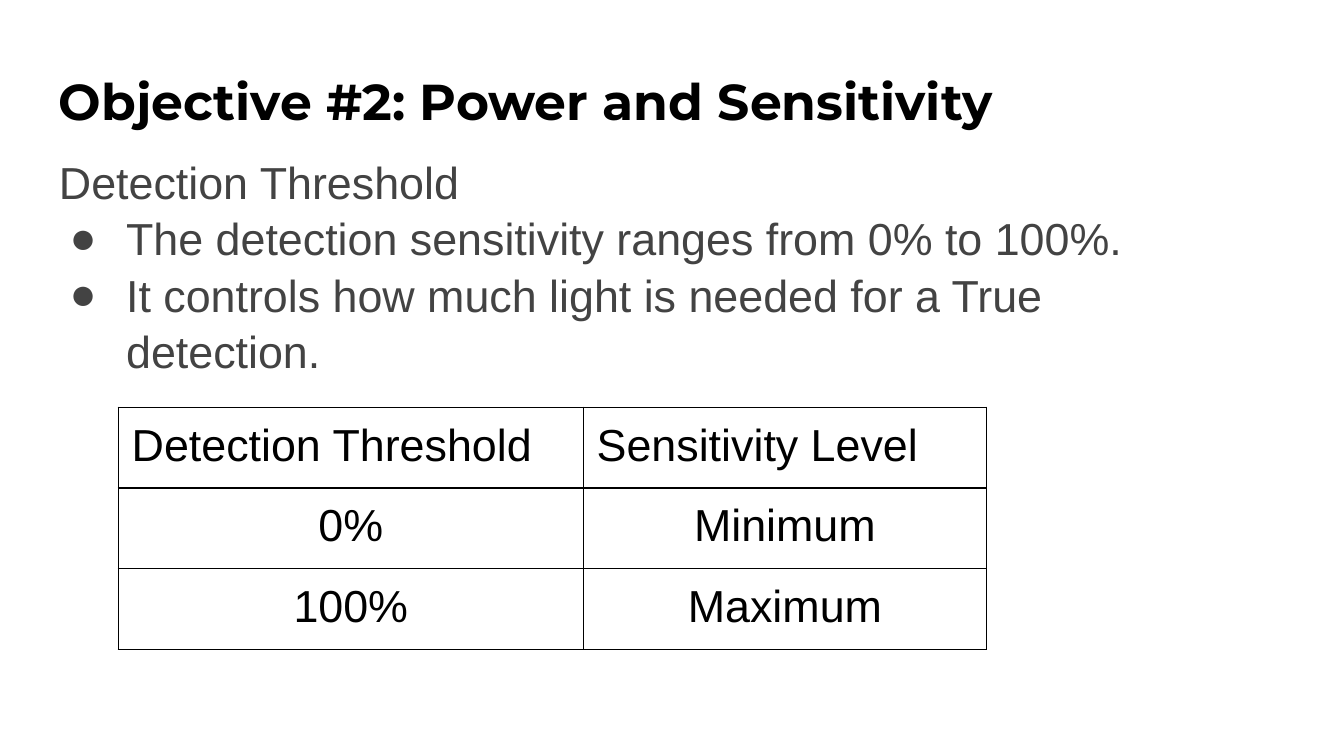
from dataclasses import dataclass

from lxml.etree import SubElement
from pptx import Presentation
from pptx.dml.color import RGBColor
from pptx.enum.text import PP_ALIGN
from pptx.oxml.ns import qn
from pptx.util import Emu, Pt

PIXEL = 4572  # 200 px to the inch
INSET = 20


@dataclass(frozen=True)
class TextStyle:
    font: str
    size: int
    color: str
    bold: bool = False


@dataclass(frozen=True)
class Theme:
    title: TextStyle = TextStyle("Montserrat", 27, "000000", True)
    body: TextStyle = TextStyle("Arial", 24, "434343")
    cell: TextStyle = TextStyle("Arial", 24, "000000")
    border_color: str = "000000"
    border_width: float = 0.75


@dataclass(frozen=True)
class Line:
    text: str
    bulleted: bool = False


@dataclass(frozen=True)
class TextBlock:
    left: int
    top: int
    width: int
    height: int
    style: TextStyle
    lines: tuple[Line, ...]
    spacing: float = 1.0


@dataclass(frozen=True)
class Grid:
    left: int
    top: int
    columns: tuple[int, ...]
    row_height: int
    rows: tuple[tuple[str, ...], ...]


THEME = Theme()

BLOCKS = (
    TextBlock(68, 84, 1864, 136, THEME.title,
              (Line("Objective #2: Power and Sensitivity"),)),
    TextBlock(68, 206, 1756, 400, THEME.body, (
        Line("Detection Threshold"),
        Line("The detection sensitivity ranges from 0% to 100%.", True),
        Line("It controls how much light is needed for a True detection.", True),
    ), 1.05),
)

SENSITIVITY = Grid(176, 606, (692, 600), 114, (
    ("Detection Threshold", "Sensitivity Level"),
    ("0%", "Minimum"),
    ("100%", "Maximum"),
))


def px(value: int) -> Emu:
    return Emu(value * PIXEL)


def add_span(para, text: str, style: TextStyle) -> None:
    span = para.add_run()
    span.text = text
    span.font.name = style.font
    span.font.size = Pt(style.size)
    span.font.bold = style.bold
    span.font.color.rgb = RGBColor.from_string(style.color)


def add_bullet(para, style: TextStyle) -> None:
    properties = para._p.get_or_add_pPr()
    properties.set("marL", str(px(100)))
    properties.set("indent", str(px(-84)))
    color = SubElement(properties, qn("a:buClr"))
    SubElement(color, qn("a:srgbClr"), val=style.color)
    SubElement(properties, qn("a:buSzPts"), val=str(style.size * 100))
    SubElement(properties, qn("a:buFont"), typeface=style.font)
    SubElement(properties, qn("a:buChar"), char="●")


def add_block(page, block: TextBlock) -> None:
    box = page.shapes.add_textbox(
        px(block.left), px(block.top), px(block.width), px(block.height))
    frame = box.text_frame
    frame.word_wrap = True
    frame.margin_left = frame.margin_right = px(INSET)
    frame.margin_top = frame.margin_bottom = px(INSET)
    for index, line in enumerate(block.lines):
        para = frame.add_paragraph() if index else frame.paragraphs[0]
        para.line_spacing = block.spacing
        if line.bulleted:
            add_bullet(para, block.style)
        add_span(para, line.text, block.style)


def add_borders(cell) -> None:
    properties = cell._tc.get_or_add_tcPr()
    for side in ("lnL", "lnR", "lnT", "lnB"):
        border = SubElement(properties, qn(f"a:{side}"),
                            w=str(Pt(THEME.border_width)))
        fill = SubElement(border, qn("a:solidFill"))
        SubElement(fill, qn("a:srgbClr"), val=THEME.border_color)


def add_grid(page, grid: Grid) -> None:
    table = page.shapes.add_table(
        len(grid.rows), len(grid.columns), px(grid.left), px(grid.top),
        px(sum(grid.columns)), px(grid.row_height * len(grid.rows))).table
    table.first_row = table.horz_banding = False
    for column, width in zip(table.columns, grid.columns):
        column.width = px(width)
    for row_index, texts in enumerate(grid.rows):
        for column_index, text in enumerate(texts):
            cell = table.cell(row_index, column_index)
            cell.margin_left = cell.margin_right = px(INSET)
            cell.margin_top = cell.margin_bottom = px(INSET)
            add_borders(cell)
            cell.fill.background()
            para = cell.text_frame.paragraphs[0]
            para.alignment = PP_ALIGN.CENTER if row_index else PP_ALIGN.LEFT
            add_span(para, text, THEME.cell)


def main() -> None:
    deck = Presentation()
    deck.slide_width, deck.slide_height = px(2000), px(1125)
    page = deck.slides.add_slide(deck.slide_layouts[6])

    # Heading and bullet list
    for block in BLOCKS:
        add_block(page, block)

    # Threshold and sensitivity table
    add_grid(page, SENSITIVITY)

    deck.save("out.pptx")


if __name__ == "__main__":
    main()
